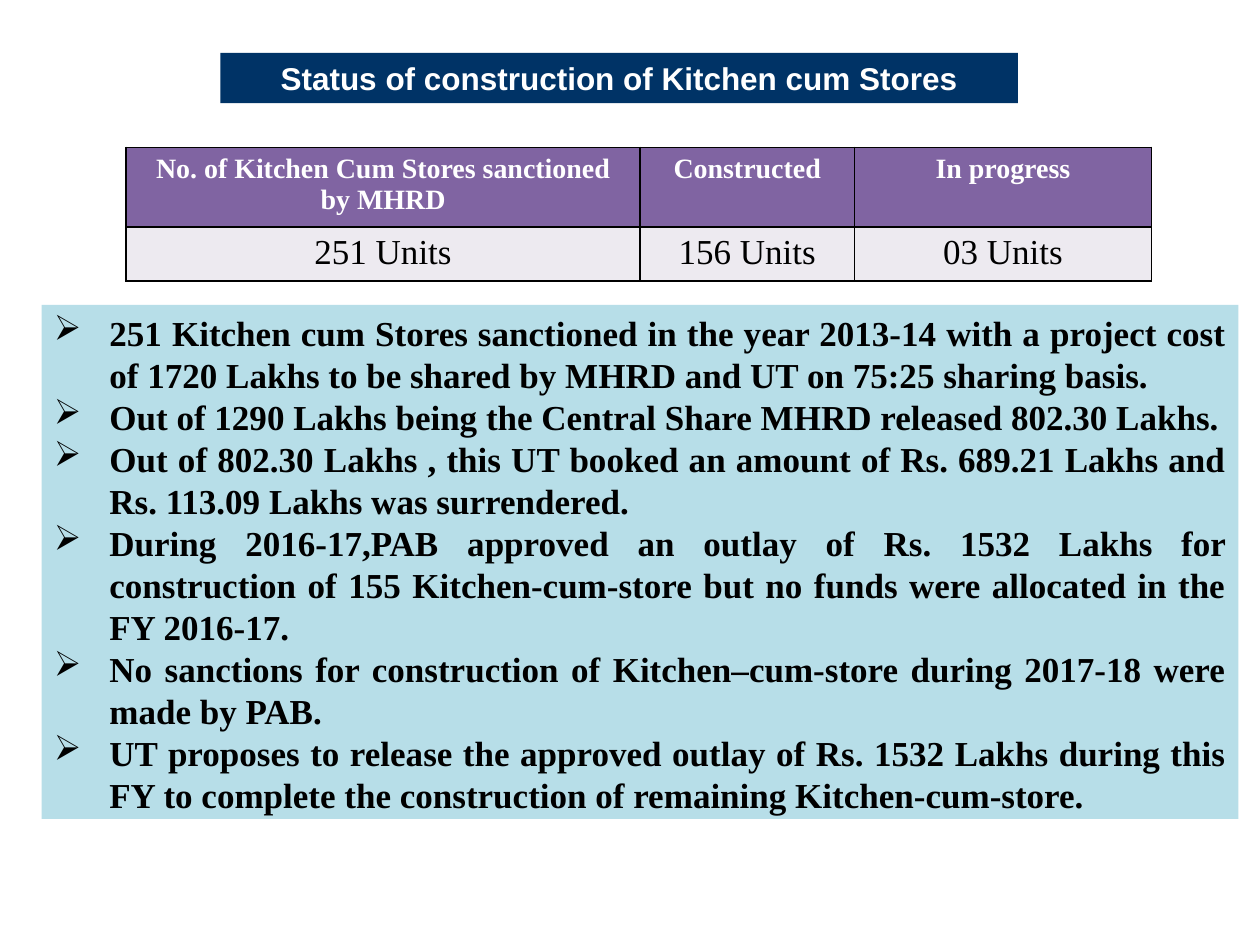
from lxml import etree
from pptx import Presentation
from pptx.dml.color import RGBColor
from pptx.enum.shapes import MSO_SHAPE as Shape
from pptx.enum.text import MSO_ANCHOR as Anchor, PP_ALIGN as Align
from pptx.oxml.ns import qn
from pptx.util import Inches, Pt

COLORS = {
    "navy": "003366",
    "purple": "8064A2",
    "lilac": "EDEAF0",
    "aqua": "B7DEE8",
    "white": "FFFFFF",
    "black": "000000",
}
SERIF = "Times New Roman"

COL_WIDTHS = [4.08, 1.7, 2.36]
ROW_HEIGHTS = [0.63, 0.43]
STATUS = [
    ["No. of Kitchen Cum Stores sanctioned by MHRD", "Constructed", "In progress"],
    ["251 Units", "156 Units", "03 Units"],
]
POINTS = [
    "251 Kitchen cum Stores sanctioned in the year 2013-14 with a project cost "
    "of 1720 Lakhs to be shared by MHRD and UT on 75:25 sharing basis.",
    "Out of 1290 Lakhs being the Central Share MHRD released 802.30 Lakhs.",
    "Out of 802.30 Lakhs , this UT booked an amount of Rs. 689.21 Lakhs and "
    "Rs. 113.09 Lakhs was surrendered.",
    "During 2016-17,PAB approved an outlay of Rs. 1532 Lakhs for construction "
    "of 155 Kitchen-cum-store but no funds were allocated in the FY 2016-17.",
    "No sanctions for construction of Kitchen–cum-store during 2017-18 were "
    "made by PAB.",
    "UT proposes to release the approved outlay of Rs. 1532 Lakhs during this "
    "FY to complete the construction of remaining Kitchen-cum-store.",
]


def rgb(name):
    return RGBColor.from_string(COLORS[name])


def write(p, text, size=20, font=SERIF, color="black", bold=False, align=Align.CENTER):
    p.alignment = align
    r = p.add_run()
    r.text = text
    r.font.size = Pt(size)
    r.font.name = font
    r.font.bold = bold
    r.font.color.rgb = rgb(color)


def add_bullet(p, char="➢", indent=0.44):
    pPr = p._p.get_or_add_pPr()
    pPr.set("marL", str(Inches(indent)))
    pPr.set("indent", str(-Inches(indent)))
    etree.SubElement(pPr, qn("a:buChar"), char=char)


def add_panel(s, x, y, w, h, fill):
    """Add a borderless rectangle and return its text frame."""
    sp = s.shapes.add_shape(Shape.RECTANGLE, Inches(x), Inches(y), Inches(w), Inches(h))
    sp.shadow.inherit = False
    sp.fill.solid()
    sp.fill.fore_color.rgb = rgb(fill)
    sp.line.fill.background()
    tf = sp.text_frame
    tf.word_wrap = True
    return tf


def set_borders(cell, color="black", width=1):
    tcPr = cell._tc.get_or_add_tcPr()
    for i, side in enumerate(("lnL", "lnR", "lnT", "lnB")):
        ln = etree.Element(qn(f"a:{side}"), w=str(Pt(width)))
        fill = etree.SubElement(ln, qn("a:solidFill"))
        etree.SubElement(fill, qn("a:srgbClr"), val=COLORS[color])
        tcPr.insert(i, ln)


def add_status_table(s, x, y):
    frame = s.shapes.add_table(len(STATUS), len(COL_WIDTHS), Inches(x), Inches(y),
                               Inches(sum(COL_WIDTHS)), Inches(sum(ROW_HEIGHTS)))
    table = frame.table
    for col, width in zip(table.columns, COL_WIDTHS):
        col.width = Inches(width)
    for row, height, texts in zip(table.rows, ROW_HEIGHTS, STATUS):
        row.height = Inches(height)
        header = texts is STATUS[0]
        for cell, text in zip(row.cells, texts):
            cell.fill.solid()
            cell.fill.fore_color.rgb = rgb("purple" if header else "lilac")
            set_borders(cell)
            write(cell.text_frame.paragraphs[0], text, size=16 if header else 20,
                  color="white" if header else "black", bold=header)


def add_points(s, x, y, w, h):
    tf = add_panel(s, x, y, w, h, "aqua")
    tf.vertical_anchor = Anchor.TOP
    for i, text in enumerate(POINTS):
        p = tf.add_paragraph() if i else tf.paragraphs[0]
        write(p, text, bold=True, align=Align.JUSTIFY)
        add_bullet(p)


def main():
    prs = Presentation()
    prs.slide_width, prs.slide_height = Inches(10), Inches(7.5)
    s = prs.slides.add_slide(prs.slide_layouts[6])
    title = add_panel(s, 1.75, 0.42, 6.33, 0.4, "navy")
    write(title.paragraphs[0], "Status of construction of Kitchen cum Stores",
          size=18, font="Arial", color="white", bold=True)
    add_status_table(s, 1, 1.17)
    add_points(s, 0.33, 2.42, 9.5, 4.08)
    prs.save("out.pptx")


if __name__ == "__main__":
    main()
